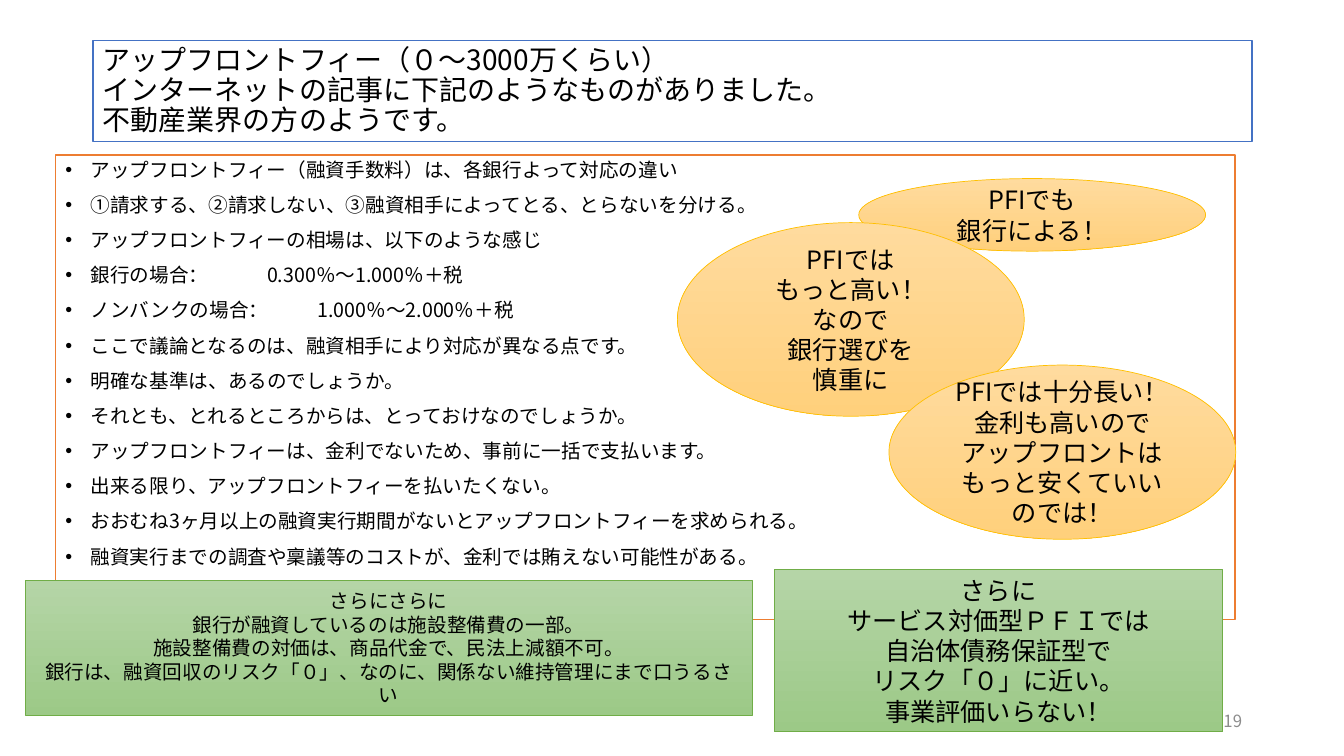
from lxml import etree
from pptx import Presentation
from pptx.dml.color import RGBColor
from pptx.enum import shapes, text
from pptx.oxml import ns
from pptx.util import Cm, Pt

FONT = "Noto Sans CJK JP"
COLORS = {
    "text": "000000", "number": "8C8C8C", "paper": "FFFFFF",
    "title_line": "4472C4", "body_line": "ED7D31",
    "gold_top": "FFDB9E", "gold_end": "FFD07C", "gold_line": "FFC000",
    "green_top": "B5D5A7", "green_end": "9CC987", "green_line": "70AD47",
}
TITLE = ["アップフロントフィー（０～3000万くらい）\v"
         "インターネットの記事に下記のようなものがありました。\v"
         "不動産業界の方のようです。"]
POINTS = [
    "アップフロントフィー（融資手数料）は、各銀行よって対応の違い",
    "①請求する、➁請求しない、③融資相手によってとる、とらないを分ける。",
    "アップフロントフィーの相場は、以下のような感じ",
    "銀行の場合：\t\t0.300％～1.000％＋税",
    "ノンバンクの場合：\t1.000％～2.000％＋税",
    "ここで議論となるのは、融資相手により対応が異なる点です。",
    "明確な基準は、あるのでしょうか。",
    "それとも、とれるところからは、とっておけなのでしょうか。",
    "アップフロントフィーは、金利でないため、事前に一括で支払います。",
    "出来る限り、アップフロントフィーを払いたくない。",
    "おおむね3ヶ月以上の融資実行期間がないとアップフロントフィーを求められる。",
    "融資実行までの調査や稟議等のコストが、金利では賄えない可能性がある。",
]
CALLOUTS = [
    ("gold", (21.64, 4.5, 8.74, 1.83), 18, ["PFIでも", "銀行による！"]),
    ("gold", (17.07, 5.61, 8.74, 4.88), 18,
     ["PFIでは", "もっと高い！", "なので", "銀行選びを", "慎重に"]),
    ("gold", (22.4, 9.2, 8.74, 4.39), 18,
     ["PFIでは十分長い！", "金利も高いので", "アップフロントは", "もっと安くていいのでは！"]),
    ("green", (19.51, 14.35, 11.3, 4.09), 18,
     ["さらに", "サービス対価型ＰＦＩでは", "自治体債務保証型で",
      "リスク「０」に近い。", "事業評価いらない！"]),
    ("green", (0.64, 14.63, 18.31, 3.4), 14,
     ["さらにさらに", "銀行が融資しているのは施設整備費の一部。",
      "施設整備費の対価は、商品代金で、民法上減額不可。",
      "銀行は、融資回収のリスク「０」、なのに、関係ない維持管理にまで口うるさい"]),
]
KINDS = {"gold": shapes.MSO_SHAPE.OVAL, "green": shapes.MSO_SHAPE.RECTANGLE}
LEFT, CENTER, RIGHT = text.PP_ALIGN.LEFT, text.PP_ALIGN.CENTER, text.PP_ALIGN.RIGHT
TOP, MIDDLE = text.MSO_ANCHOR.TOP, text.MSO_ANCHOR.MIDDLE


def rgb(name):
    return RGBColor.from_string(COLORS[name])


def write(sp, lines, size, align, anchor=MIDDLE, color="text", leading=1.2):
    tf = sp.text_frame
    tf.word_wrap = True
    tf.vertical_anchor = anchor
    for i, line in enumerate(lines):
        p = tf.add_paragraph() if i else tf.paragraphs[0]
        p.text = line
        p.alignment = align
        p.line_spacing = Pt(round(size * leading, 1))
        for r in p.runs:
            r.font.size = Pt(size)
            r.font.name = FONT
            r.font.color.rgb = rgb(color)
            ea = etree.SubElement(r.font._element, ns.qn("a:ea"))
            ea.set("typeface", FONT)
    return tf


def add_box(slide, kind, place, line, width):
    sp = slide.shapes.add_shape(kind, *map(Cm, place))
    sp.shadow.inherit = False
    sp.line.color.rgb = rgb(line)
    sp.line.width = Pt(width)
    return sp


def add_panel(slide, place, line):
    sp = add_box(slide, shapes.MSO_SHAPE.RECTANGLE, place, line, 1)
    sp.fill.solid()
    sp.fill.fore_color.rgb = rgb("paper")
    return sp


def add_bullet(p):
    p.space_before = Pt(10)
    pPr = p._p.get_or_add_pPr()
    pPr.set("marL", str(Cm(0.635)))
    pPr.set("indent", str(-Cm(0.635)))
    etree.SubElement(pPr, ns.qn("a:buFont")).set("typeface", "Arial")
    etree.SubElement(pPr, ns.qn("a:buChar")).set("char", "•")


def add_callout(slide, hue, place, size, lines):
    sp = add_box(slide, KINDS[hue], place, hue + "_line", 0.5)
    sp.fill.gradient()
    sp.fill.gradient_angle = 270
    for stop, end, pos in zip(sp.fill.gradient_stops, ("_top", "_end"), (0, 1)):
        stop.color.rgb = rgb(hue + end)
        stop.position = pos
    write(sp, lines, size, CENTER)


def main():
    prs = Presentation()
    prs.slide_width, prs.slide_height = Cm(33.867), Cm(19.05)
    s = prs.slides.add_slide(prs.slide_layouts[6])

    title = add_panel(s, (2.34, 1.02, 29.21, 2.54), "title_line")
    write(title, TITLE, 20, LEFT, leading=1.08)

    body = add_panel(s, (1.4, 3.91, 29.72, 11.71), "body_line")
    tf = write(body, POINTS, 14, LEFT, TOP, leading=1.08)
    for p in tf.paragraphs:
        add_bullet(p)

    number = s.shapes.add_textbox(*map(Cm, (23.93, 17.65, 7.62, 1.02)))
    write(number, ["19"], 12, RIGHT, color="number")

    for callout in CALLOUTS:
        add_callout(s, *callout)
    prs.save("out.pptx")


if __name__ == "__main__":
    main()
